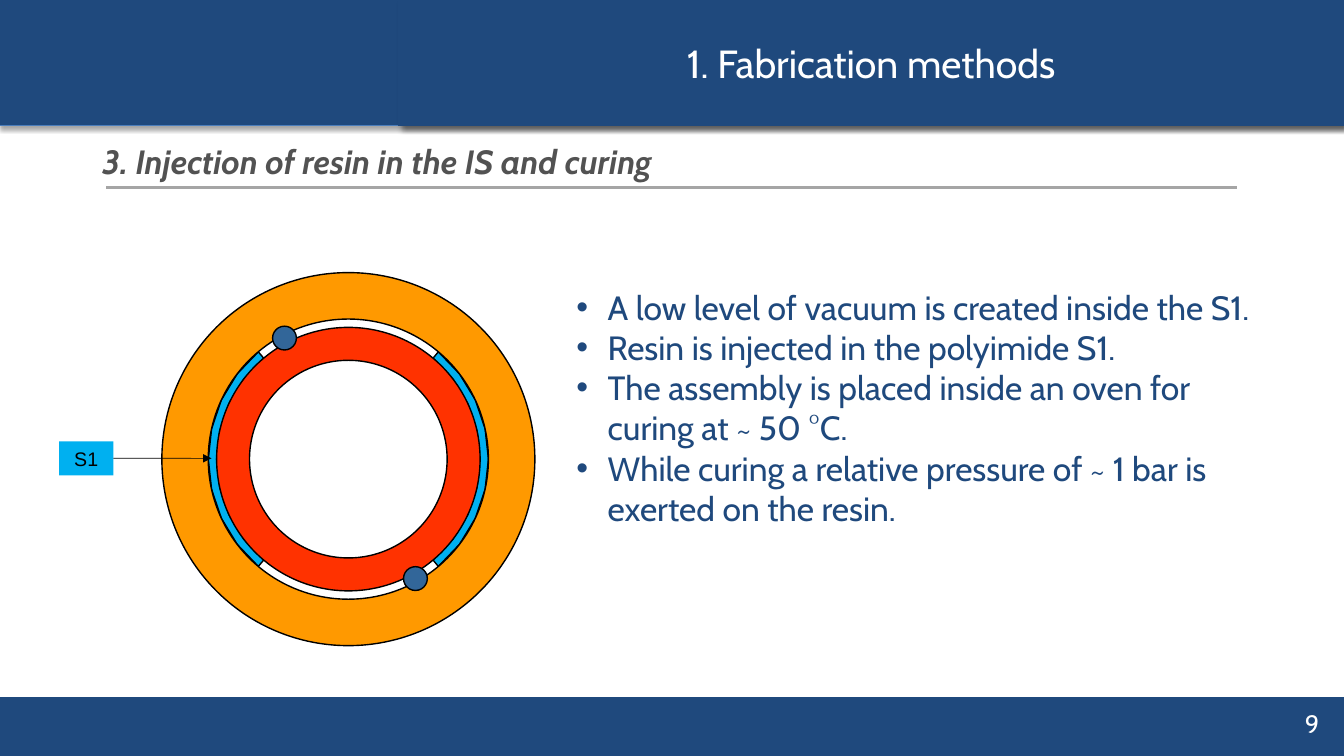
import math
from dataclasses import dataclass

import lxml.etree
import pptx
import pptx.dml.color
import pptx.enum.shapes
import pptx.enum.text
import pptx.oxml
import pptx.oxml.ns
import pptx.util

Cm = pptx.util.Cm
Pt = pptx.util.Pt
MSO = pptx.enum.shapes.MSO_SHAPE
ALIGN = pptx.enum.text.PP_ALIGN
ANCHOR = pptx.enum.text.MSO_ANCHOR
qn = pptx.oxml.ns.qn


@dataclass(frozen=True)
class Theme:
    navy: str = "1F497D"
    header_edge: str = "4B7EBC"
    white: str = "FFFFFF"
    black: str = "000000"
    heading: str = "525252"
    rule: str = "A5A5A5"
    resin: str = "00B0F0"
    outer_ring: str = "FF9900"
    inner_ring: str = "FF3200"
    port: str = "326699"
    font: str = "Cabin"
    label_font: str = "Arial"
    title_size: int = 28
    body_size: int = 24
    number_size: int = 18
    label_size: int = 14


T = Theme()
CENTRE = (8.78, 11.57)
BULLETS = [
    "A low level of vacuum is created inside the S1.",
    "Resin is injected in the polyimide S1.",
    "The assembly is placed inside an oven for curing at ~ 50 °C.",
    "While curing a relative pressure of ~ 1 bar is exerted on the resin.",
]


def rgb(value):
    return pptx.dml.color.RGBColor.from_string(value)


def set_format(obj, values):
    for name, value in values.items():
        setattr(obj, name, value)


def place(sp, left, top, width, height):
    set_format(sp, {"left": Cm(left), "top": Cm(top),
                    "width": Cm(width), "height": Cm(height)})


def paint(sp, fill, line=None, width=1):
    sp.fill.solid()
    sp.fill.fore_color.rgb = rgb(fill)
    if line:
        sp.line.color.rgb = rgb(line)
        sp.line.width = Pt(width)
    else:
        sp.line.fill.background()


def add_shadow(sp, alpha, blur, dist, angle):
    """Give sp an outer black shadow: percent, points, points, degrees."""
    sp.shadow.inherit = False
    effects = sp.element.spPr.find(qn("a:effectLst"))
    shadow = lxml.etree.SubElement(
        effects, qn("a:outerShdw"), blurRad=str(Pt(blur)), dist=str(Pt(dist)),
        dir=str(angle * 60000), algn="t", rotWithShape="0")
    colour = lxml.etree.SubElement(shadow, qn("a:srgbClr"), val=T.black)
    lxml.etree.SubElement(colour, qn("a:alpha"), val=str(alpha * 1000))


def add_bullet(p, indent):
    pPr = p._p.get_or_add_pPr()
    pPr.set("marL", str(indent))
    pPr.set("indent", str(-indent))
    lxml.etree.SubElement(pPr, qn("a:buFont"), typeface="Arial")
    lxml.etree.SubElement(pPr, qn("a:buChar"), char="•")


def write(sp, lines, size, color, font=T.font, align=ALIGN.LEFT,
          anchor=ANCHOR.TOP, bullets=False, **style):
    tf = sp.text_frame
    set_format(tf, {"word_wrap": True, "vertical_anchor": anchor,
                    "auto_size": pptx.enum.text.MSO_AUTO_SIZE.NONE})
    for i, line in enumerate(lines):
        p = tf.add_paragraph() if i else tf.paragraphs[0]
        set_format(p, {"alignment": align, "space_before": Pt(0), "line_spacing": 1.0})
        if bullets:
            add_bullet(p, Cm(0.79))
        r = p.add_run()
        r.text = line
        set_format(r.font, {"size": Pt(size), "name": font, **style})
        r.font.color.rgb = rgb(color)


def add_box(shapes, kind, box, fill, line=None, width=1):
    sp = shapes.add_shape(kind, *map(Cm, box))
    sp.shadow.inherit = False
    paint(sp, fill, line, width)
    return sp


def add_text(shapes, box, *args, **kwargs):
    write(shapes.add_textbox(*map(Cm, box)), *args, **kwargs)


def add_line(shapes, start, end, color, width, arrow=False):
    line = shapes.add_connector(pptx.enum.shapes.MSO_CONNECTOR.STRAIGHT,
                                *map(Cm, start + end))
    line.line.color.rgb = rgb(color)
    line.line.width = Pt(width)
    if arrow:
        lxml.etree.SubElement(line.line._get_or_add_ln(), qn("a:tailEnd"), type="triangle")
    lxml.etree.SubElement(line.element.spPr, qn("a:effectLst"))
    return line


def circle_box(x, y, radius):
    return x - radius, y - radius, 2 * radius, 2 * radius


def add_ring(shapes, outer, inner, fill):
    ring = add_box(shapes, MSO.DONUT, circle_box(*CENTRE, outer), fill, T.black)
    ring.adjustments[0] = (outer - inner) / (2 * outer)


def add_resin_slot(shapes, middle, outer, inner, half_angle=50, steps=8):
    """Draw a curved band centred on the angle middle, in degrees."""
    def arc(radius):
        angles = [math.radians(middle + half_angle * (2 * i / steps - 1))
                  for i in range(steps + 1)]
        return [(Cm(CENTRE[0] + radius * math.cos(a)),
                 Cm(CENTRE[1] + radius * math.sin(a))) for a in angles]

    points = arc(outer) + arc(inner)[::-1]
    builder = shapes.build_freeform(*points[0])
    builder.add_line_segments(points[1:], close=True)
    sp = builder.convert_to_shape()
    sp.shadow.inherit = False
    paint(sp, T.resin, T.black)


def add_cross_section(s):
    shapes = s.shapes.add_group_shape().shapes
    for middle in (180, 0):
        add_resin_slot(shapes, middle, 3.53, 3.32)
    add_ring(shapes, 4.7, 3.53, T.outer_ring)
    add_ring(shapes, 3.32, 2.49, T.inner_ring)
    for x, y in ((7.17, 8.52), (10.47, 14.58)):
        add_box(shapes, MSO.OVAL, circle_box(x, y, 0.3), T.port, T.black)


def add_slot_label(s):
    label = add_box(s.shapes, MSO.RECTANGLE, (1.49, 11.12, 1.37, 0.86), T.resin)
    write(label, ["S1"], T.label_size, T.black, T.label_font, ALIGN.CENTER, ANCHOR.MIDDLE)
    arrow = add_line(s.shapes, (2.86, 11.55), (5.33, 11.55), T.black, 0.5, arrow=True)
    arrow.begin_connect(label, 3)


def add_banners(s):
    """Build the footer and header bands and hand them to the slide's layout."""
    footer = add_box(s.shapes, MSO.RECTANGLE, (0, 17.57, 33.96, 1.52), T.navy)
    header = add_box(s.shapes, MSO.RECTANGLE, (0, 0, 33.87, 3.17),
                     T.navy, T.header_edge, 0.75)
    add_shadow(header, 35, 3.1, 1.8, 90)
    for number, band in enumerate((footer, header), start=101):
        band.element.nvSpPr.cNvPr.set("id", str(number))
        s.slide_layout.shapes.element.append(band.element)


def main():
    prs = pptx.Presentation()
    set_format(prs, {"slide_width": Cm(33.87), "slide_height": Cm(19.05)})
    s = prs.slides.add_slide(prs.slide_layouts[1])
    title, body = s.placeholders
    add_banners(s)

    place(title, 10.03, 0, 23.84, 3.17)
    title.fill.solid()
    title.fill.fore_color.rgb = rgb(T.navy)
    add_shadow(title, 43, 4, 3, 45)
    write(title, ["1. Fabrication methods"], T.title_size, T.white,
          align=ALIGN.CENTER, anchor=ANCHOR.MIDDLE)

    add_text(s.shapes, (31.6, 17.73, 1.9, 1.02), ["9"], T.number_size, T.white,
             align=ALIGN.RIGHT, anchor=ANCHOR.MIDDLE)
    add_text(s.shapes, (2.33, 3.43, 27.46, 1.27),
             ["3. Injection of resin in the IS and curing"],
             T.body_size, T.heading, bold=True, italic=True)
    add_line(s.shapes, (2.68, 4.72), (31.18, 4.72), T.rule, 2)

    add_cross_section(s)
    place(body, 14.27, 7.09, 17.7, 7.44)
    write(body, BULLETS, T.body_size, T.navy, bullets=True)
    add_slot_label(s)
    prs.save("out.pptx")


if __name__ == "__main__":
    main()
